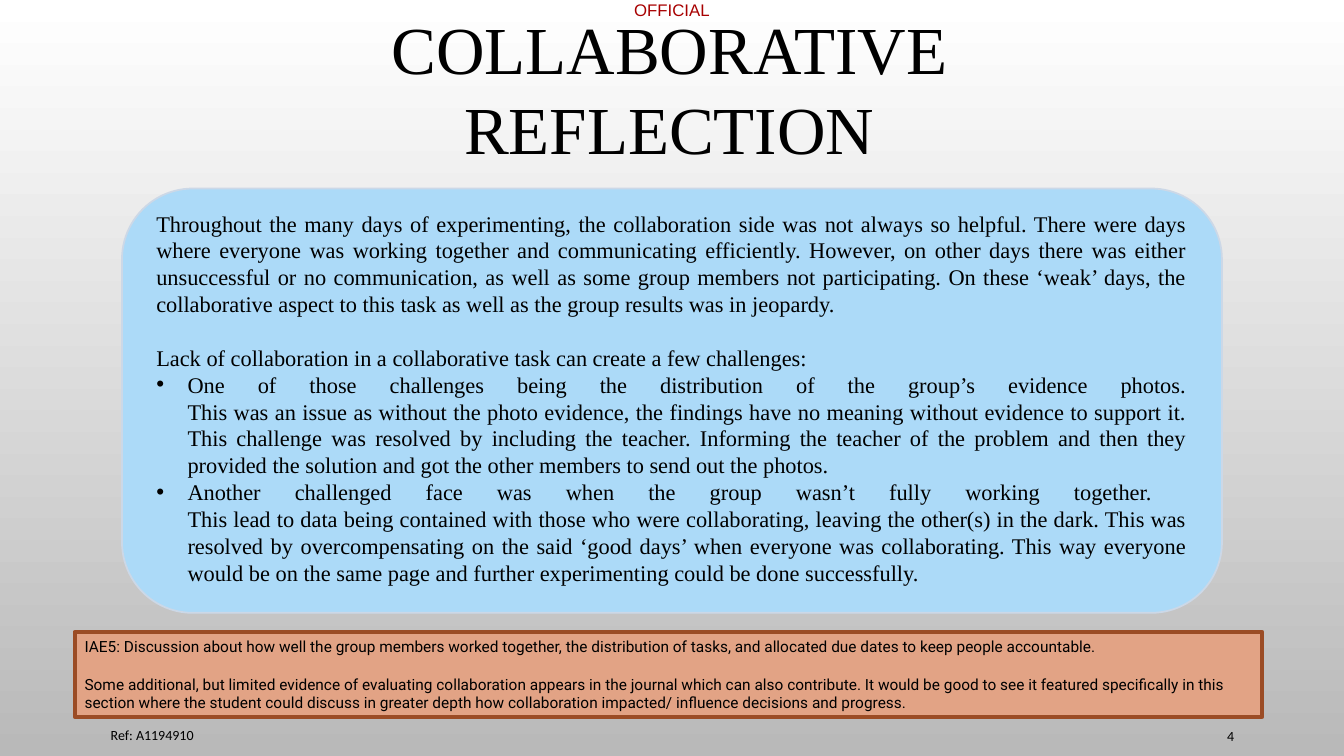
from copy import deepcopy

from lxml import etree
from pptx import Presentation
from pptx.dml.color import RGBColor
from pptx.enum.shapes import MSO_SHAPE
from pptx.enum.text import MSO_ANCHOR, MSO_AUTO_SIZE, PP_ALIGN
from pptx.oxml.ns import qn
from pptx.util import Inches, Pt

LEFT, CENTER, RIGHT, JUSTIFY = PP_ALIGN.LEFT, PP_ALIGN.CENTER, PP_ALIGN.RIGHT, PP_ALIGN.JUSTIFY
TOP, MIDDLE = MSO_ANCHOR.TOP, MSO_ANCHOR.MIDDLE
ROUNDED, RECTANGLE = MSO_SHAPE.ROUNDED_RECTANGLE, MSO_SHAPE.RECTANGLE
NO_AUTOFIT = MSO_AUTO_SIZE.NONE
LIST_INDENT = Inches(0.31)

INTRODUCTION = (
    "Throughout the many days of experimenting, the collaboration side was not always so helpful. "
    "There were days where everyone was working together and communicating efficiently. However, on "
    "other days there was either unsuccessful or no communication, as well as some group members not "
    "participating. On these ‘weak’ days, the collaborative aspect to this task as well as the group "
    "results was in jeopardy. ")
CHALLENGES_LEAD = "Lack of collaboration in a collaborative task can create a few challenges:"
# \v is a line break inside the paragraph
CHALLENGES = [
    "One of those challenges being the distribution of the group’s evidence photos.\v"
    "This was an issue as without the photo evidence, the findings have no meaning without evidence "
    "to support it. This challenge was resolved by including the teacher. Informing the teacher of the "
    "problem and then they provided the solution and got the other members to send out the photos. ",
    "Another challenged face was when the group wasn’t fully working together. \v"
    "This lead to data being contained with those who were collaborating, leaving the other(s) in the "
    "dark. This was resolved by overcompensating on the said ‘good days’ when everyone was "
    "collaborating. This way everyone would be on the same page and further experimenting could be "
    "done successfully.",
]
COMMENTS = [
    "IAE5: Discussion about how well the group members worked together, the distribution of tasks, and "
    "allocated due dates to keep people accountable.",
    "Some additional, but limited evidence of evaluating collaboration appears in the journal which can "
    "also contribute. It would be good to see it featured specifically in this section where the student "
    "could discuss in greater depth how collaboration impacted/ influence decisions and progress.",
]

TITLE_FORMAT = {"name": "Times New Roman", "size": Pt(48)}
BODY_FORMAT = {"name": "Times New Roman", "size": Pt(16)}
COMMENT_FORMAT = {"name": "Roboto", "size": Pt(11)}
FOOTER_FORMAT = {"name": "Calibri", "size": Pt(10)}
MARKING_FORMAT = {"name": "Arial", "size": Pt(12)}


def rgb(value):
    return RGBColor.from_string(value)


def place(shape, left, top, width, height):
    shape.left, shape.top = Inches(left), Inches(top)
    shape.width, shape.height = Inches(width), Inches(height)


def set_bullet(paragraph, bullet):
    """Give the paragraph a hanging bullet, or none when bullet is empty."""
    properties = paragraph._p.get_or_add_pPr()
    indent = LIST_INDENT if bullet else 0
    properties.set("marL", str(indent))
    properties.set("indent", str(-indent))
    if bullet:
        etree.SubElement(properties, qn("a:buFont")).set("typeface", "Arial")
        etree.SubElement(properties, qn("a:buChar")).set("char", bullet)
    else:
        etree.SubElement(properties, qn("a:buNone"))


def write_paragraph(paragraph, text, font_format, color="000000", alignment=LEFT,
                    spacing=None, before=0, bullet=""):
    paragraph.text = text
    set_bullet(paragraph, bullet)
    paragraph.alignment = alignment
    paragraph.space_before = Pt(before)
    if spacing:
        paragraph.line_spacing = Pt(spacing)
    for run in paragraph.runs:
        for attribute, value in font_format.items():
            setattr(run.font, attribute, value)
        run.font.color.rgb = rgb(color)
    for line_break in paragraph._p.findall(qn("a:br")):
        line_break.append(deepcopy(paragraph.runs[0]._r.rPr))


def write_text(shape, items, font_format, anchor=TOP, **shared):
    """Fill the shape with (text, paragraph options) items."""
    frame = shape.text_frame
    frame.word_wrap = True
    frame.auto_size = NO_AUTOFIT
    frame.vertical_anchor = anchor
    for index, (text, options) in enumerate(items):
        paragraph = frame.add_paragraph() if index else frame.paragraphs[0]
        write_paragraph(paragraph, text, font_format, **shared, **options)


def add_panel(slide, kind, box, fill, line, line_width):
    panel = slide.shapes.add_shape(kind, *map(Inches, box))
    panel.shadow.inherit = False
    panel.fill.solid()
    panel.fill.fore_color.rgb = rgb(fill)
    panel.line.color.rgb = rgb(line)
    panel.line.width = Pt(line_width)
    return panel


def add_label(slide, box, text, font_format, inset=None, **options):
    label = slide.shapes.add_textbox(*map(Inches, box))
    write_text(label, [(text, {})], font_format, **options)
    if inset is not None:
        for side in ("left", "top", "right", "bottom"):
            setattr(label.text_frame, f"margin_{side}", Inches(inset))
    return label


def set_background(slide, colors):
    fill = slide.background.fill
    fill.gradient()
    fill.gradient_angle = 270
    for stop, color in zip(fill.gradient_stops, colors):
        stop.color.rgb = rgb(color)


def main():
    presentation = Presentation()
    presentation.slide_width, presentation.slide_height = Inches(13.33), Inches(7.5)
    slide = presentation.slides.add_slide(presentation.slide_layouts[1])
    set_background(slide, ["FFFFFF", "B9B9B9"])

    title, body = slide.placeholders
    place(title, 3.14, 0.01, 7, 1.72)
    write_text(title, [("COLLABORATIVE REFLECTION", {})], TITLE_FORMAT, anchor=MIDDLE,
               alignment=CENTER, spacing=57)

    place(body, 1.45, 2.03, 10.42, 3.87)
    reflection = [(INTRODUCTION, {}), (CHALLENGES_LEAD, {"before": 19.2})]
    reflection += [(challenge, {"bullet": "•"}) for challenge in CHALLENGES]
    write_text(body, reflection, BODY_FORMAT, alignment=JUSTIFY, spacing=19.2)

    reflection_panel = add_panel(slide, ROUNDED, (1.21, 1.87, 10.91, 4.21), "ACDAF8", "CCD8E7", 1.25)
    title._element.addprevious(reflection_panel._element)  # behind the placeholders

    comment_panel = add_panel(slide, RECTANGLE, (0.74, 6.27, 11.78, 0.84), "E2A385", "9B4C25", 2.75)
    write_text(comment_panel, [(COMMENTS[0], {}), (COMMENTS[1], {"before": 13.4})],
               COMMENT_FORMAT, spacing=13.4)

    add_label(slide, (6.29, 0, 0.8, 0.2), "OFFICIAL", MARKING_FORMAT, inset=0,
              color="A80000").text_frame.word_wrap = False
    add_label(slide, (1, 7.09, 7.3, 0.4), "Ref: A1194910", FOOTER_FORMAT, anchor=MIDDLE)
    add_label(slide, (11.5, 7.1, 0.84, 0.4), "4", FOOTER_FORMAT, anchor=MIDDLE, alignment=RIGHT)

    presentation.save("out.pptx")


if __name__ == "__main__":
    main()
